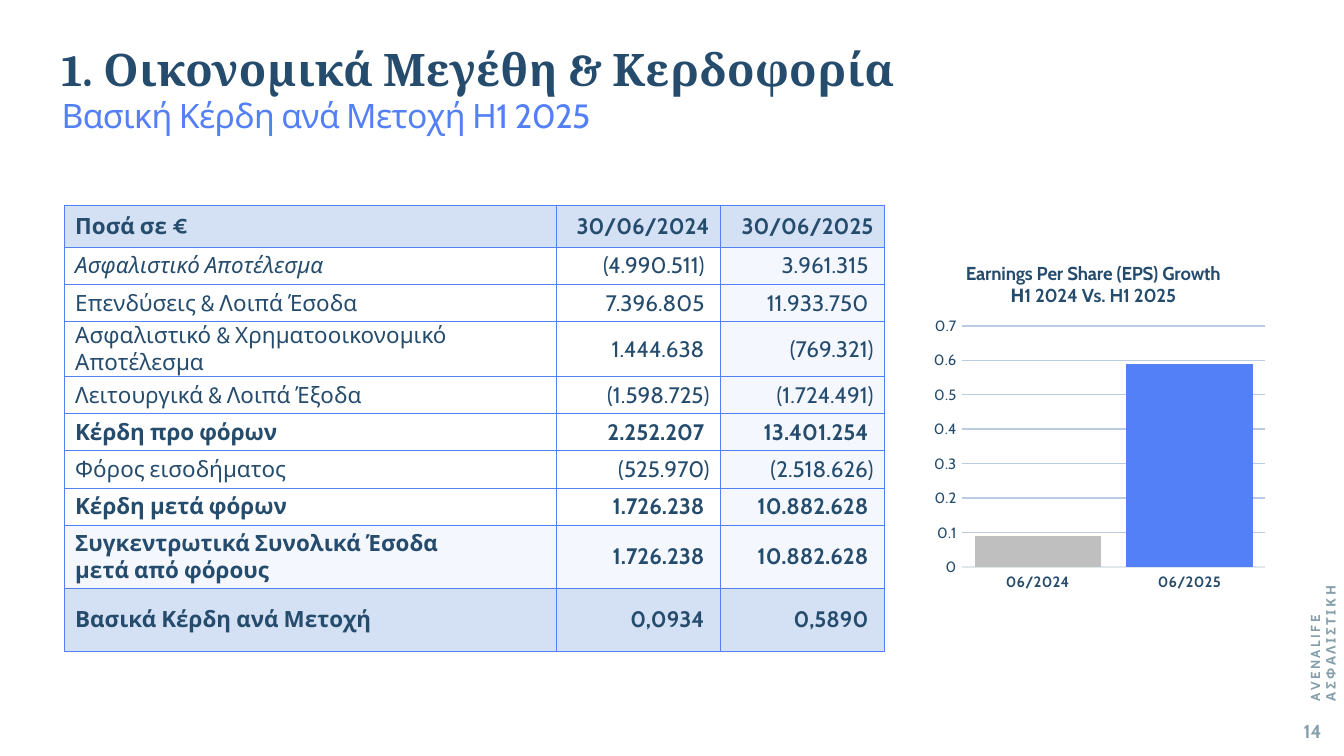
from lxml import etree
from pptx import Presentation
from pptx import util as u
from pptx.chart import data
from pptx.dml import color
from pptx.enum import chart as ch
from pptx.enum import text
from pptx.oxml import ns

NAVY, BLUE, SLATE = "254C6D", "5480F7", "849EAA"
PALE, MIST, GREY, GRID, AXIS = "D4E0F3", "F4F7FE", "BFBFBF", "B9CCE4", "E0E7EA"

ROWS = [
    ("Ποσά σε €", "30/06/2024", "30/06/2025"),
    ("Ασφαλιστικό Αποτέλεσμα", " (4.990.511) ", " 3.961.315 "),
    ("Επενδύσεις & Λοιπά Έσοδα", " 7.396.805 ", " 11.933.750 "),
    ("Ασφαλιστικό & Χρηματοοικονομικό Αποτέλεσμα", " 1.444.638 ", " (769.321)"),
    ("Λειτουργικά & Λοιπά Έξοδα", " (1.598.725)", " (1.724.491)"),
    ("Κέρδη προ φόρων", " 2.252.207 ", " 13.401.254 "),
    ("Φόρος εισοδήματος", "(525.970)", "(2.518.626)"),
    ("Κέρδη μετά φόρων", " 1.726.238 ", " 10.882.628 "),
    ("Συγκεντρωτικά Συνολικά Έσοδα\nμετά από φόρους", " 1.726.238 ", " 10.882.628 "),
    ("Βασικά Κέρδη ανά Μετοχή", " 0,0934 ", " 0,5890 "),
]
TOP, LOW = 0.31, 0.47
BOLD = {0, 5, 7, 8, 9}
STRONG = {0, 9}


def rgb(code):
    return color.RGBColor.from_string(code)


def paint(fill, code):
    fill.solid()
    fill.fore_color.rgb = rgb(code)


def style(font, size, code, bold=False, name="Cabin"):
    font.size, font.bold, font.name = u.Pt(size), bold, name
    font.color.rgb = rgb(code)


def add_run(para, words, size, code, bold=False, name="Cabin", gap=0):
    run = para.add_run()
    run.text = words
    style(run.font, size, code, bold, name)
    run.font._element.set("spc", str(round(gap * 100)))


def add_text(slide, box):
    shape = slide.shapes.add_textbox(*map(u.Inches, box))
    shape.text_frame.word_wrap = True
    return shape, shape.text_frame.paragraphs[0]


def add_head(slide, box):
    shape, para = add_text(slide, box)
    shape.text_frame.margin_top = shape.text_frame.margin_bottom = u.Inches(0.1)
    add_run(para, "1. Οικονομικά Μεγέθη & Κερδοφορία", 24, NAVY, True, "Cambria", 0.2)
    para.add_line_break()
    add_run(para, "Βασική Κέρδη ανά Μετοχή Η1 2025", 18, BLUE, gap=-0.3)


def add_border(cell):
    props = cell._tc.get_or_add_tcPr()
    for spot, side in enumerate(("lnL", "lnR", "lnT", "lnB")):
        line = etree.Element(ns.qn(f"a:{side}"), w=str(u.Pt(0.5)))
        fill = etree.SubElement(line, ns.qn("a:solidFill"))
        etree.SubElement(fill, ns.qn("a:srgbClr"), val=BLUE)
        props.insert(spot, line)


def add_grid(slide, box):
    frame = slide.shapes.add_table(len(ROWS), 3, *map(u.Inches, box))
    table = frame.table
    table.horz_banding = False
    mid = (box[3] - TOP - 2 * LOW) / 7
    heights = [TOP] + [mid] * 7 + [LOW] * 2
    for col, share in zip(table.columns, (0.6, 0.2, 0.2)):
        col.width = u.Inches(box[2] * share)
    for r, (row, height) in enumerate(zip(ROWS, heights)):
        table.rows[r].height = u.Inches(height)
        for c, words in enumerate(row):
            cell = table.cell(r, c)
            cell.text = words
            cell.vertical_anchor = text.MSO_ANCHOR.MIDDLE
            cell.margin_left = cell.margin_right = u.Inches(0.08)
            cell.margin_top = cell.margin_bottom = 0
            if r in STRONG:
                paint(cell.fill, PALE)
            elif c == 2 or r == 8:
                paint(cell.fill, MIST)
            else:
                cell.fill.background()
            add_border(cell)
            for para in cell.text_frame.paragraphs:
                style(para.font, 12, NAVY, r in BOLD)
                para.font.italic = (r, c) == (1, 0)
                para.alignment = text.PP_ALIGN.RIGHT if c else text.PP_ALIGN.LEFT


def make_layout(**parts):
    layout = etree.Element(ns.qn("c:layout"))
    manual = etree.SubElement(layout, ns.qn("c:manualLayout"))
    for key, val in parts.items():
        etree.SubElement(manual, ns.qn(f"c:{key}"), val=str(val))
    return layout


def add_bars(slide, box):
    stats = data.CategoryChartData()
    stats.categories = ["06/2024", "06/2025"]
    stats.add_series("Series 1", (0.09, 0.59))
    kind = ch.XL_CHART_TYPE.COLUMN_CLUSTERED
    chart = slide.shapes.add_chart(kind, *map(u.Inches, box), stats).chart
    style(chart.font, 8, NAVY)
    chart.has_legend = False

    title = chart.chart_title
    title.text_frame.text = "Earnings Per Share (EPS) Growth\nΗ1 2024 Vs. H1 2025"
    for para in title.text_frame.paragraphs:
        style(para.font, 10, NAVY, True)
    title.include_in_layout = False
    title._element.find(ns.qn("c:tx")).addnext(
        make_layout(xMode="edge", yMode="edge", x=0.13, y=0.06))

    area = chart._chartSpace.chart.plotArea
    for old in area.findall(ns.qn("c:layout")):
        area.remove(old)
    area.insert(0, make_layout(layoutTarget="inner", xMode="edge", yMode="edge",
                               x=0.12, y=0.23, w=0.88, h=0.65))

    plot = chart.plots[0]
    plot.gap_width, plot.vary_by_categories = 20, False
    for spot, code in enumerate((GREY, BLUE)):
        paint(plot.series[0].points[spot].format.fill, code)

    cats, vals = chart.category_axis, chart.value_axis
    for axis in (cats, vals):
        axis.major_tick_mark = axis.minor_tick_mark = ch.XL_TICK_MARK.NONE
        style(axis.tick_labels.font, 8, NAVY, axis is cats)
    cats.format.line.color.rgb = rgb(AXIS)
    cats.format.line.width = u.Pt(0.75)
    vals.minimum_scale, vals.maximum_scale, vals.major_unit = 0, 0.7, 0.1
    vals.tick_labels.number_format = "General"
    vals.tick_labels.number_format_is_linked = False
    vals.format.line.fill.background()
    vals.major_gridlines.format.line.color.rgb = rgb(GRID)
    vals.major_gridlines.format.line.width = u.Pt(0.75)


def add_side(slide, box):
    shape, para = add_text(slide, box)
    shape.rotation = 270
    add_run(para, "AVENALIFE ΑΣΦΑΛΙΣΤΙΚΗ", 7, SLATE, True, gap=1.4)


def add_page(slide, box):
    shape, para = add_text(slide, box)
    para.alignment = text.PP_ALIGN.RIGHT
    add_run(para, "14", 10, SLATE, True)


def main():
    deck = Presentation()
    deck.slide_width = u.Inches(10)
    deck.slide_height = deck.slide_width * 9 // 16
    slide = deck.slides.add_slide(deck.slide_layouts[6])
    add_grid(slide, (0.48, 1.53, 6.1, 3.19))
    add_page(slide, (9.41, 5.31, 0.52, 0.27))
    add_side(slide, (8.93, 4.35, 1.71, 0.22))
    add_head(slide, (0.36, 0.21, 9.06, 0.71))
    add_bars(slide, (6.85, 1.79, 2.57, 2.76))
    deck.save("out.pptx")


if __name__ == "__main__":
    main()
